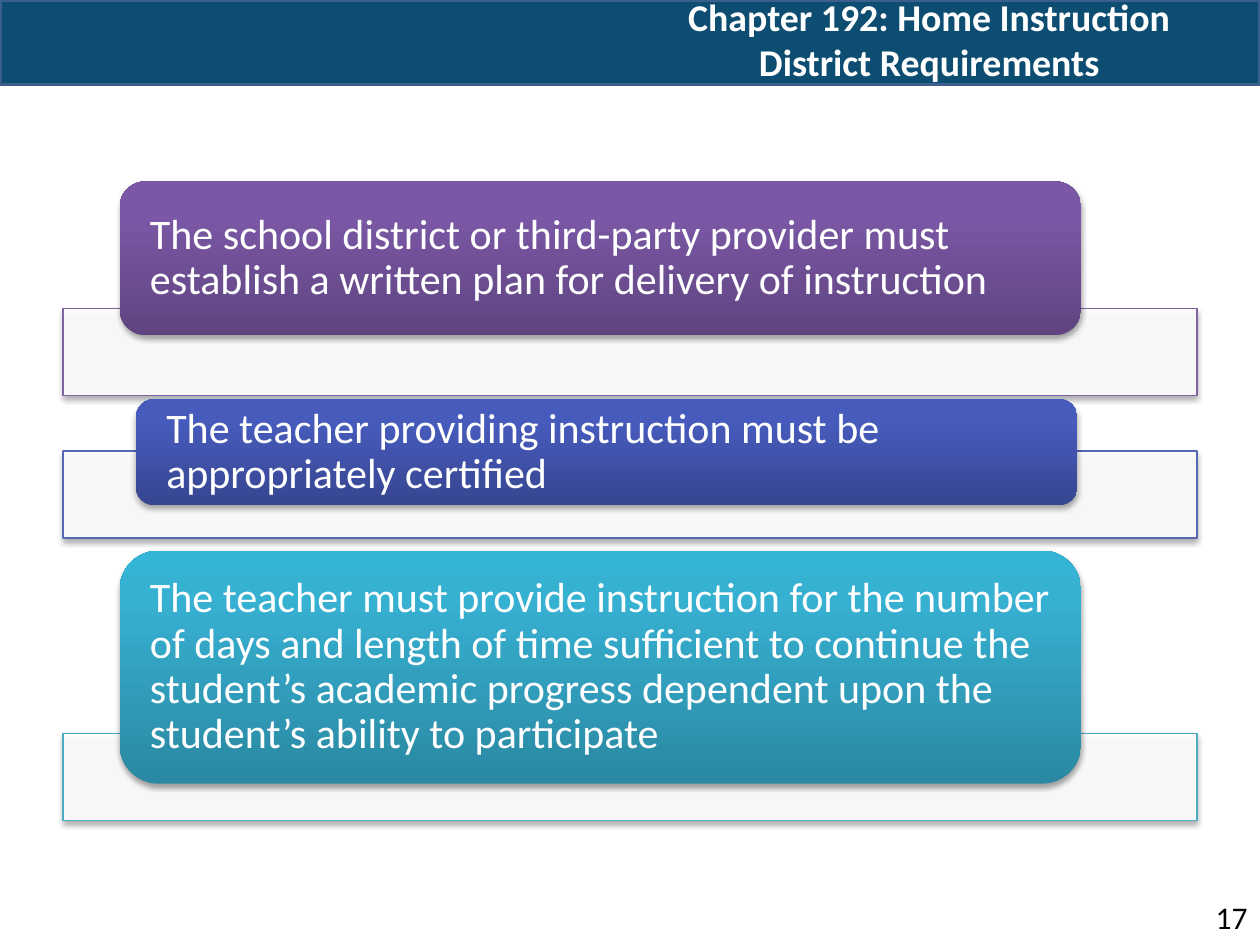
from dataclasses import dataclass

import lxml.etree
import pptx
import pptx.dml.color
import pptx.enum.shapes
import pptx.enum.text
import pptx.oxml.ns
import pptx.util

Kind = pptx.enum.shapes.MSO_SHAPE
Align = pptx.enum.text.PP_ALIGN
Anchor = pptx.enum.text.MSO_ANCHOR
qn = pptx.oxml.ns.qn


@dataclass(frozen=True)
class Theme:
    font: str = "Calibri"
    white: str = "FFFFFF"
    black: str = "000000"
    band: str = "0E4D72"
    edge: str = "3A5F8C"
    head: float = 21.6
    body: float = 24
    page: float = 18


@dataclass(frozen=True)
class Box:
    """Left, top, width and height in grid columns and rows."""
    x: float
    y: float
    w: float
    h: float


@dataclass(frozen=True)
class Rule:
    text: str
    card: Box
    bar: float  # top row of the bar behind the card
    line: str
    stops: tuple[str, str, str]


LOOK = Theme()
COLS, ROWS = 100, 75
CELL = pptx.util.Inches(10) // COLS
ROUND = 1 / 6  # corner radius as a share of card height
INSET = 2.4

RULES = [
    Rule("The school district or third-party provider must establish a "
         "written plan for delivery of instruction",
         Box(9.5, 14.4, 76.3, 12.2), 24.5, "8064A2",
         ("5F4480", "7B58A6", "7C57A8")),
    Rule("The teacher providing instruction must be appropriately certified",
         Box(10.8, 31.7, 74.7, 8.4), 35.8, "5767B4",
         ("374691", "475BBC", "455ABF")),
    Rule("The teacher must provide instruction for the number of days and "
         "length of time sufficient to continue the student’s academic "
         "progress dependent upon the student’s ability to participate",
         Box(9.5, 43.7, 76.3, 18.5), 58.2, "4BACC6",
         ("2A88A2", "37B1D2", "34B4D6")),
]


def cells(n: float) -> int:
    return round(n * CELL)


def place(box: Box) -> tuple[int, int, int, int]:
    return cells(box.x), cells(box.y), cells(box.w), cells(box.h)


def rgb(code: str) -> pptx.dml.color.RGBColor:
    return pptx.dml.color.RGBColor.from_string(code)


def add(root, tag: str, **attrs):
    return lxml.etree.SubElement(root, qn(tag), attrs)


def draw(slide, kind, box: Box, fill: str, line: str = "", width: float = 0):
    shape = slide.shapes.add_shape(kind, *place(box))
    shape.shadow.inherit = False
    shape.fill.solid()
    shape.fill.fore_color.rgb = rgb(fill)
    if line:
        shape.line.color.rgb = rgb(line)
        shape.line.width = pptx.util.Pt(width)
    else:
        shape.line.fill.background()
    return shape


def shade(shape) -> None:
    """Give the shape a soft shadow straight below it."""
    root = shape._element.spPr.find(qn("a:effectLst"))
    drop = add(root, "a:outerShdw", blurRad=str(pptx.util.Pt(3.1)),
               dist=str(pptx.util.Pt(1.8)), dir="5400000", rotWithShape="0")
    color = add(drop, "a:srgbClr", val=LOOK.black)
    add(color, "a:alpha", val="35000")


def blend(shape, stops: tuple[str, str, str]) -> None:
    """Fill from the bottom up, with stops at 0, 80 and 100 percent."""
    props = shape._element.spPr
    old = props.find(qn("a:solidFill"))
    grad = add(props, "a:gradFill", rotWithShape="1")
    props.replace(old, grad)
    group = add(grad, "a:gsLst")
    for share, code in zip((0, 80, 100), stops):
        stop = add(group, "a:gs", pos=str(share * 1000))
        add(stop, "a:srgbClr", val=code)
    add(grad, "a:lin", ang="16200000", scaled="0")


def write(shape, text: str, size: float, color: str, align, bold=False):
    frame = shape.text_frame
    frame.word_wrap = True
    frame.vertical_anchor = Anchor.MIDDLE
    par = frame.paragraphs[0]
    par.text = text
    par.alignment = align
    font = par.font
    font.name, font.size, font.bold = LOOK.font, pptx.util.Pt(size), bold
    font.color.rgb = rgb(color)
    return frame


def label(slide, box: Box, *style):
    return write(slide.shapes.add_textbox(*place(box)), *style)


def draw_rule(slide, rule: Rule) -> None:
    bar = draw(slide, Kind.RECTANGLE, Box(5, rule.bar, 90, 6.9),
               LOOK.white, rule.line, 0.75)
    color = bar._element.spPr.find(qn("a:solidFill"))[0]
    add(color, "a:alpha", val="90000")
    shade(bar)

    card = draw(slide, Kind.ROUNDED_RECTANGLE, rule.card, rule.stops[1])
    card.adjustments[0] = ROUND
    blend(card, rule.stops)
    shade(card)
    frame = write(card, rule.text, LOOK.body, LOOK.white, Align.LEFT)
    # The round corners already push the text in by 0.29 of their radius.
    side = cells(INSET - 0.29 * ROUND * rule.card.h)
    frame.margin_left = frame.margin_right = side
    frame.margin_top = frame.margin_bottom = 0
    frame.paragraphs[0].line_spacing = 0.9


def main() -> None:
    deck = pptx.Presentation()
    deck.slide_width, deck.slide_height = cells(COLS), cells(ROWS)
    slide = deck.slides.add_slide(deck.slide_layouts[6])
    draw(slide, Kind.RECTANGLE, Box(0, 0, COLS, 6.7), LOOK.band, LOOK.edge, 2)
    label(slide, Box(93.3, 70.8, 6.7, 4), "17", LOOK.page, LOOK.black,
          Align.RIGHT)
    label(slide, Box(47.5, 0, 52.5, 6.2),
          "Chapter 192: Home Instruction\vDistrict Requirements",
          LOOK.head, LOOK.white, Align.CENTER, True)
    for rule in RULES:
        draw_rule(slide, rule)
    deck.save("out.pptx")


if __name__ == "__main__":
    main()
